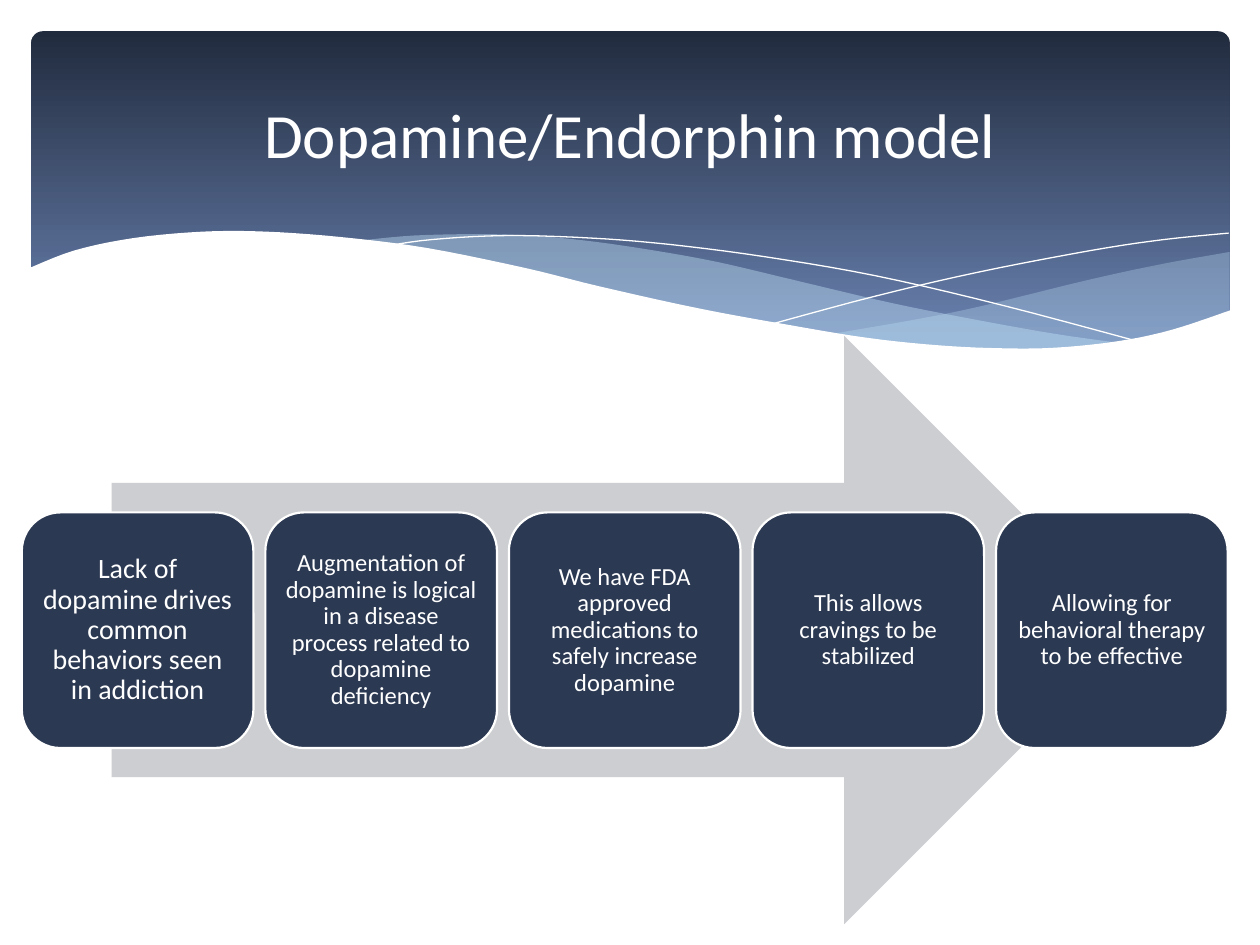
from lxml import etree
from pptx import Presentation, util as u
from pptx.dml.color import RGBColor
from pptx.enum import shapes, text
from pptx.oxml.ns import qn

WHITE = RGBColor(0xFF, 0xFF, 0xFF)
BANNER_TOP = RGBColor(0x21, 0x2B, 0x3E)
BANNER_BOTTOM = RGBColor(0x69, 0x81, 0xAF)
WAVE = RGBColor(0xC6, 0xE7, 0xFC)
ARROW = RGBColor(0xCD, 0xCE, 0xD1)
NAVY = RGBColor(0x2C, 0x39, 0x52)


def smooth(pts, steps=5):
    padded = [pts[0], *pts, pts[-1]]
    curve = [pts[0]]
    for a, b, c, d in zip(padded, padded[1:], padded[2:], padded[3:]):
        for t in (n / steps for n in range(1, steps + 1)):
            curve.append(tuple(
                q + t * (r - p) / 2
                + t**2 * (2 * p - 5 * q + 4 * r - s) / 2
                + t**3 * (3 * q - p - 3 * r + s) / 2
                for p, q, r, s in zip(a, b, c, d)))
    return curve


def write(sp, line, size):
    tf = sp.text_frame
    tf.word_wrap = True
    tf.vertical_anchor = text.MSO_ANCHOR.MIDDLE
    p = tf.paragraphs[0]
    p.text = line
    p.alignment = text.PP_ALIGN.CENTER
    p.font.name = "Calibri"
    p.font.size = u.Pt(size)
    p.font.color.rgb = WHITE
    return tf


prs = Presentation()
prs.slide_width, prs.slide_height = u.Cm(25.4), u.Cm(19.05)
s = prs.slides.add_slide(prs.slide_layouts[6])

sp = s.shapes.add_shape(shapes.MSO_SHAPE.ROUNDED_RECTANGLE,
                        u.Cm(0.63), u.Cm(0.63), u.Cm(24.16), u.Cm(6.86))
sp.adjustments[0] = 0.034
sp.shadow.inherit = False
sp.line.fill.background()
sp.fill.gradient()
sp.fill.gradient_angle = 270
for stop, color, position in zip(sp.fill.gradient_stops,
                                 (BANNER_TOP, BANNER_BOTTOM), (0, 0.9)):
    stop.color.rgb = color
    stop.position = position

right_wave = smooth([
    (24.79, 5.08), (23.39, 5.33), (21.87, 5.66), (19.79, 6.17),
    (18.52, 6.43), (16.79, 6.73),
]) + smooth([
    (16.79, 6.73), (17.91, 6.88), (19.23, 7.01), (20.4, 7.06),
    (21.69, 7.01), (22.99, 6.83), (23.93, 6.58), (24.79, 6.27),
])
middle_wave = smooth([
    (22.68, 6.93), (21.26, 6.73), (19.69, 6.45), (17.93, 6.1),
    (15.98, 5.64), (14.45, 5.28), (13.06, 5.03), (11.79, 4.85),
    (10.67, 4.75), (9.65, 4.72), (8.33, 4.75), (7.26, 4.85),
]) + smooth([
    (7.26, 4.85), (8.69, 5.05), (10.26, 5.36), (11.4, 5.64),
    (13.46, 6.1), (15.27, 6.48), (16.89, 6.76), (18.34, 6.96),
    (19.63, 7.06), (20.78, 7.09), (21.77, 7.04), (22.68, 6.93),
])
falling_line = smooth([
    (7.85, 4.95), (8.71, 4.83), (10.19, 4.75), (11.91, 4.8), (13.51, 4.93),
    (15.44, 5.18), (17.65, 5.56), (20.19, 6.15), (23.04, 6.91),
])
rising_line = smooth([
    (15.57, 6.53), (17.65, 5.97), (19.71, 5.49), (22, 5.05),
    (23.47, 4.83), (24.77, 4.7),
])
white_wave = smooth([
    (24.82, 6.25), (23.62, 6.65), (22.53, 6.88), (21.26, 7.01),
    (20.14, 7.02), (18.9, 6.96), (17.48, 6.81), (15.9, 6.55), (14.1, 6.22),
    (12.07, 5.77), (10.62, 5.41), (8.61, 5), (6.88, 4.78), (5.36, 4.67),
    (4.09, 4.67), (2.69, 4.8), (1.5, 5.05), (0.58, 5.41),
]) + [(0.58, 8.36), (24.82, 8.36)]

for pts, color, opacity in (
    (right_wave, WAVE, 29),
    (middle_wave, WAVE, 40),
    (falling_line, None, 100),
    (rising_line, None, 100),
    (white_wave, WHITE, 100),
):
    start, *rest = [(u.Cm(x), u.Cm(y)) for x, y in pts]
    fb = s.shapes.build_freeform(*start)
    fb.add_line_segments(rest, close=color is not None)
    sp = fb.convert_to_shape()
    sp.shadow.inherit = False
    if color is None:
        sp.fill.background()
        sp.line.color.rgb = WHITE
        sp.line.width = u.Cm(0)
        continue
    sp.line.fill.background()
    sp.fill.solid()
    sp.fill.fore_color.rgb = color
    if opacity < 100:
        clr = sp.fill._xPr.find(qn("a:solidFill"))[0]
        etree.SubElement(clr, qn("a:alpha")).set("val", str(opacity * 1000))

sp = s.shapes.add_shape(shapes.MSO_SHAPE.RIGHT_ARROW,
                        u.Cm(2.25), u.Cm(6.77), u.Cm(20.7), u.Cm(11.86))
sp.shadow.inherit = False
sp.fill.solid()
sp.fill.fore_color.rgb = ARROW
sp.line.fill.background()

steps = (
    ("Lack of dopamine drives common behaviors seen in addiction", 16, 0.17),
    ("Augmentation of dopamine is logical in a disease process related to "
     "dopamine deficiency", 14, 0.15),
    ("We have FDA approved medications to safely increase dopamine", 14, 0.15),
    ("This allows cravings to be stabilized", 14, 0.15),
    ("Allowing for behavioral therapy to be effective", 14, 0.15),
)
for i, (line, size, inset) in enumerate(steps):
    sp = s.shapes.add_shape(shapes.MSO_SHAPE.ROUNDED_RECTANGLE,
                            u.Cm(0.44 + 4.91 * i), u.Cm(10.33),
                            u.Cm(4.67), u.Cm(4.75))
    sp.shadow.inherit = False
    sp.fill.solid()
    sp.fill.fore_color.rgb = NAVY
    sp.line.color.rgb = WHITE
    sp.line.width = u.Pt(1.25)
    tf = write(sp, line, size)
    tf.margin_left = tf.margin_right = u.Cm(inset)
    tf.margin_top = tf.margin_bottom = u.Cm(inset)
    tf.paragraphs[0].line_spacing = 0.9

sp = s.shapes.add_textbox(u.Cm(1.27), u.Cm(0.94), u.Cm(22.86), u.Cm(3.48))
write(sp, "Dopamine/Endorphin model", 36)

prs.save("out.pptx")
